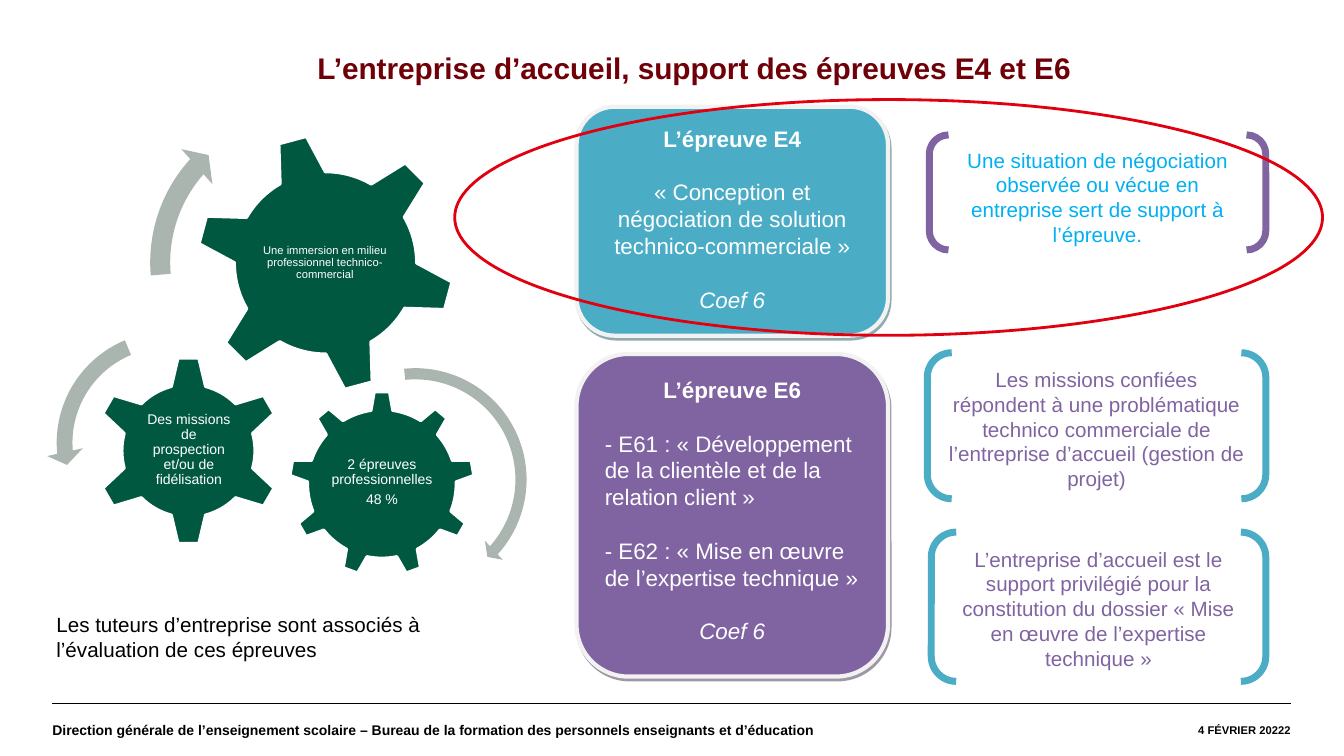
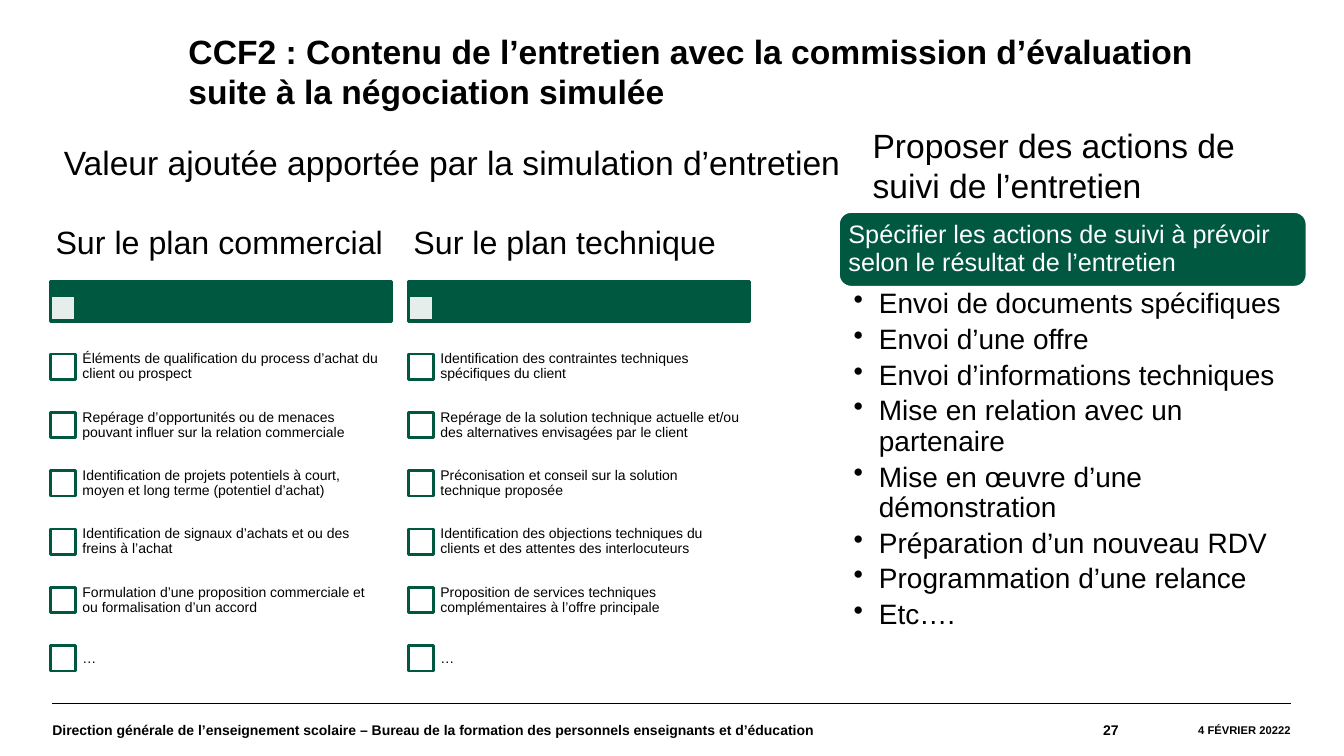
from lxml.etree import SubElement
from pptx import Presentation
from pptx.dml.color import RGBColor
from pptx.enum.shapes import MSO_CONNECTOR, MSO_SHAPE
from pptx.enum.text import MSO_ANCHOR, MSO_AUTO_SIZE, PP_ALIGN
from pptx.oxml.ns import qn
from pptx.util import Cm, Pt

GREEN, GREY, BLACK, WHITE = "005841", "ABB5B0", "000000", "FFFFFF"
PURPLE, TEAL = "8064A2", "4BACC6"
MIDDLE = MSO_ANCHOR.MIDDLE
CENTER, RIGHT = PP_ALIGN.CENTER, PP_ALIGN.RIGHT
DEFAULT_MARGINS = (0.25, 0.13, 0.25, 0.13)
TIGHT = {"line_spacing": 0.9}


def draw(page, kind, place, fill=None, line=None, width=2, adjust=()):
    shape = page.shapes.add_shape(kind, *map(Cm, place))
    shape.shadow.inherit = False
    for index, value in enumerate(adjust):
        shape.adjustments[index] = value
    if fill:
        shape.fill.solid()
        shape.fill.fore_color.rgb = RGBColor.from_string(fill)
    else:
        shape.fill.background()
    if line:
        shape.line.color.rgb = RGBColor.from_string(line)
        shape.line.width = Pt(width)
    else:
        shape.line.fill.background()
    return shape


def write(box, lines, size, color=BLACK, margins=DEFAULT_MARGINS,
          anchor=MSO_ANCHOR.TOP, layout={}, font={}, bullet=None):
    frame = box.text_frame
    frame.word_wrap = True
    frame.auto_size = MSO_AUTO_SIZE.NONE
    frame.vertical_anchor = anchor
    for side, margin in zip(("left", "top", "right", "bottom"), margins):
        setattr(frame, f"margin_{side}", Cm(margin))
    for index, (text, own_layout, own_font) in enumerate(lines):
        para = frame.add_paragraph() if index else frame.paragraphs[0]
        if bullet:
            properties = para._p.get_or_add_pPr()
            properties.set("marL", str(Cm(0.64)))
            properties.set("indent", str(-Cm(0.64)))
            SubElement(properties, qn("a:buChar"), char=bullet)
        for name, value in ({"alignment": PP_ALIGN.LEFT} | layout | own_layout).items():
            setattr(para, name, value)
        span = para.add_run()
        span.text = text
        span.font.color.rgb = RGBColor.from_string(color)
        for name, value in ({"name": "Arial", "size": Pt(size), "bold": False} | font | own_font).items():
            setattr(span.font, name, value)


deck = Presentation()
deck.slide_width, deck.slide_height = Cm(33.87), Cm(19.05)

titles = [
    ("L’entreprise d’accueil, support des épreuves E4 et E6",
     (3.76, 1.12, 27.46, 1.17), 21.3, "700007", CENTER),
    ("CCF2 : Contenu de l’entretien avec la commission d’évaluation suite à la négociation simulée",
     (4.5, 0.64, 27.61, 2.31), 24, BLACK, PP_ALIGN.LEFT),
]
footers = [
    ("Direction générale de l’enseignement scolaire – Bureau de la formation des personnels enseignants et d’éducation",
     1.32, 21.87, 10, PP_ALIGN.LEFT),
    ("4 FÉVRIER 20222", 28.19, 4.34, 8, RIGHT),
]
number = ("27", 23.19, 5, 10, RIGHT)

pages = []
for title, place, size, color, alignment in titles:
    page = deck.slides.add_slide(deck.slide_layouts[5])
    heading = page.shapes.title
    heading.left, heading.top, heading.width, heading.height = map(Cm, place)
    write(heading, [(title, {}, {})], size, color,
          layout={"alignment": alignment}, font={"bold": True})
    rule = page.shapes.add_connector(MSO_CONNECTOR.STRAIGHT, Cm(1.32), Cm(17.73), Cm(32.54), Cm(17.73))
    rule.line.color.rgb = RGBColor.from_string(BLACK)
    rule.line.width = Pt(0.8)
    SubElement(rule._element.spPr, qn("a:effectLst"))
    for text, left, width, size, alignment in footers + [number] * len(pages):
        box = page.shapes.add_textbox(Cm(left), Cm(17.73), Cm(width), Cm(1.32))
        write(box, [(text, {}, {})], size, margins=(0, 0, 0, 0), anchor=MIDDLE,
              layout={"alignment": alignment}, font={"bold": True})
    pages.append(page)
exam_page, interview_page = pages

gears = [
    (MSO_SHAPE.GEAR_9, (7.29, 9.86, 4.67, 4.67), 0, (8.23, 10.95, 2.79, 2.41), 10,
     ["2 épreuves professionnelles", "48 %"]),
    (MSO_SHAPE.GEAR_6, (2.36, 8.97, 4.78, 4.78), 0, (3.58, 10.16, 2.36, 2.36), 10,
     ["Des missions de prospection et/ou de fidélisation"]),
    (MSO_SHAPE.GEAR_6, (4.93, 3.35, 6.55, 6.55), 345, (6.35, 4.78, 3.68, 3.68), 8,
     ["Une immersion en milieu professionnel technico-commercial"]),
]
for kind, place, rotation, text_place, size, texts in gears:
    gear = draw(exam_page, kind, place, GREEN, WHITE)
    gear.rotation = rotation
    box = exam_page.shapes.add_textbox(*map(Cm, text_place))
    write(box, [(text, {}, {}) for text in texts], size, WHITE, (0.03,) * 4, MIDDLE,
          TIGHT | {"alignment": CENTER, "space_after": Pt(3.5)})

arrows = [
    (MSO_SHAPE.CIRCULAR_ARROW, (7.47, 9.09, 5.99, 5.99), (0.047, 2.99, 25.187, 158.558, 0.055)),
    (MSO_SHAPE.LEFT_CIRCULAR_ARROW, (1.17, 8.1, 6.12, 6.12), (0.065, 4.3, 104.891, 148.378, 0.075)),
    (MSO_SHAPE.CIRCULAR_ARROW, (3.45, 2.41, 8.41, 8.41), (0.06, 3.941, 133.138, 105.082, 0.07)),
]
for kind, place, adjust in arrows:
    draw(exam_page, kind, place, GREY, adjust=adjust)

gap = {"space_before": Pt(19)}
centered = {"alignment": CENTER}
coefficient = ("Coef 6", gap | centered, {"italic": True})
exams = [
    (8.92, 8.13, PURPLE, "3F3151", [
        ("L’épreuve E6", centered, {"bold": True}),
        ("- E61 : « Développement de la clientèle et de la relation client »", gap, {}),
        ("- E62 : « Mise en œuvre de l’expertise technique »", gap, {}),
        coefficient]),
    (2.69, 5.77, TEAL, "205867", [
        ("L’épreuve E4", centered, {"bold": True}),
        ("« Conception et négociation de solution technico-commerciale »", gap | centered, {}),
        coefficient]),
]
card_margins = (0.33, 0.18, 0.33, 0.18)
for top, height, fill, shade, lines in exams:
    card = draw(exam_page, MSO_SHAPE.ROUNDED_RECTANGLE, (14.53, top, 7.85, height), fill, "F2F2F2", 3)
    effects = card._element.spPr.find(qn("a:effectLst"))
    shadow = SubElement(effects, qn("a:outerShdw"), dist=str(Pt(2.2)), dir="3780000",
                        algn="ctr", rotWithShape="0")
    tint = SubElement(shadow, qn("a:srgbClr"), val=shade)
    SubElement(tint, qn("a:alpha"), val="50000")
    write(card, lines, 16, WHITE, card_margins)

brackets = [
    ((23.42, 3.4, 8.48, 2.9), PURPLE, "00B0F0",
     ["Une situation de négociation observée ou vécue en entreprise sert de support à l’épreuve."]),
    ((23.37, 8.89, 8.53, 3.68), TEAL, PURPLE,
     ["Les missions confiées",
      "répondent à une problématique technico commerciale de l’entreprise d’accueil (gestion de projet)"]),
    ((23.47, 13.41, 8.43, 3.76), TEAL, PURPLE,
     ["L’entreprise d’accueil est le support privilégié pour la constitution du dossier "
      "« Mise en œuvre de l’expertise technique »"]),
]
for place, line, color, texts in brackets:
    bracket = draw(exam_page, MSO_SHAPE.DOUBLE_BRACKET, place, WHITE, line, 5, (0.167,))
    write(bracket, [(text, {}, {}) for text in texts], 14.7, color, card_margins, layout=centered)

draw(exam_page, MSO_SHAPE.OVAL, (11.46, 2.51, 21.87, 5.94), line="E1000F")

captions = [
    (exam_page, (1.17, 15.29, 10.16, 1.5), 14.7, PP_ALIGN.LEFT,
     "Les tuteurs d’entreprise sont associés à l’évaluation de ces épreuves"),
    (interview_page, (0, 3.45, 22.78, 1.27), 24, CENTER,
     "Valeur ajoutée apportée par la simulation d’entretien"),
    (interview_page, (21.74, 3.02, 11.33, 2.31), 24, PP_ALIGN.LEFT,
     "Proposer des actions de suivi de l’entretien"),
]
for page, place, size, alignment, text in captions:
    box = page.shapes.add_textbox(*map(Cm, place))
    write(box, [(text, {}, {})], size, layout={"alignment": alignment})

checklists = [
    ("Sur le plan commercial", [
        "Éléments de qualification du process d’achat du client ou prospect",
        "Repérage d’opportunités ou de menaces pouvant influer sur la relation commerciale",
        "Identification de projets potentiels à court, moyen et long terme (potentiel d’achat)",
        "Identification de signaux d’achats et ou des freins à l’achat",
        "Formulation d’une proposition commerciale et ou formalisation d’un accord",
        "…"]),
    ("Sur le plan technique", [
        "Identification des contraintes techniques spécifiques du client",
        "Repérage de la solution technique actuelle et/ou des alternatives envisagées par le client",
        "Préconisation et conseil sur la solution technique proposée",
        "Identification des objections techniques du clients et des attentes des interlocuteurs",
        "Proposition de services techniques complémentaires à l’offre principale",
        "…"]),
]
tick_size, row_height = 0.64, 1.47
for column, (header, items) in enumerate(checklists):
    left = 1.27 + column * 9.02
    draw(interview_page, MSO_SHAPE.RECTANGLE, (left, 7.09, 8.59, 1.02), GREEN, GREEN)
    tick = draw(interview_page, MSO_SHAPE.RECTANGLE, (left, 7.44, tick_size, tick_size), WHITE, GREEN)
    tint = tick._element.spPr.find(qn("a:solidFill")).find(qn("a:srgbClr"))
    SubElement(tint, qn("a:alpha"), val="90000")
    box = interview_page.shapes.add_textbox(Cm(left), Cm(5.26), Cm(8.59), Cm(1.8))
    write(box, [(header, {}, {})], 23, margins=(0.13, 0.08, 0.13, 0.08), anchor=MIDDLE, layout=TIGHT)
    for row, item in enumerate(items):
        top = 8.51 + row * row_height
        draw(interview_page, MSO_SHAPE.RECTANGLE, (left, top + 0.41, tick_size, tick_size), WHITE, GREEN)
        box = interview_page.shapes.add_textbox(Cm(left + 0.61), Cm(top), Cm(7.98), Cm(row_height))
        write(box, [(item, {}, {})], 10, margins=(0.2,) * 4, anchor=MIDDLE, layout=TIGHT)

banner = draw(interview_page, MSO_SHAPE.ROUNDED_RECTANGLE, (21.13, 5.33, 11.81, 1.91), GREEN, WHITE)
write(banner, [("Spécifier les actions de suivi à prévoir selon le résultat de l’entretien", {}, {})],
      18, WHITE, (0.16,) * 4, MIDDLE, TIGHT)

actions = [
    "Envoi de documents spécifiques",
    "Envoi d’une offre",
    "Envoi d’informations techniques",
    "Mise en relation avec un partenaire",
    "Mise en œuvre d’une démonstration",
    "Préparation d’un nouveau RDV",
    "Programmation d’une relance",
    "Etc….",
]
box = interview_page.shapes.add_textbox(Cm(21.13), Cm(7.19), Cm(11.81), Cm(8.66))
write(box, [(action, {}, {}) for action in actions], 20, margins=(0.38, 0.1, 0.51, 0.1),
      layout=TIGHT | {"space_after": Pt(4)}, bullet="•")

deck.save("out.pptx")
